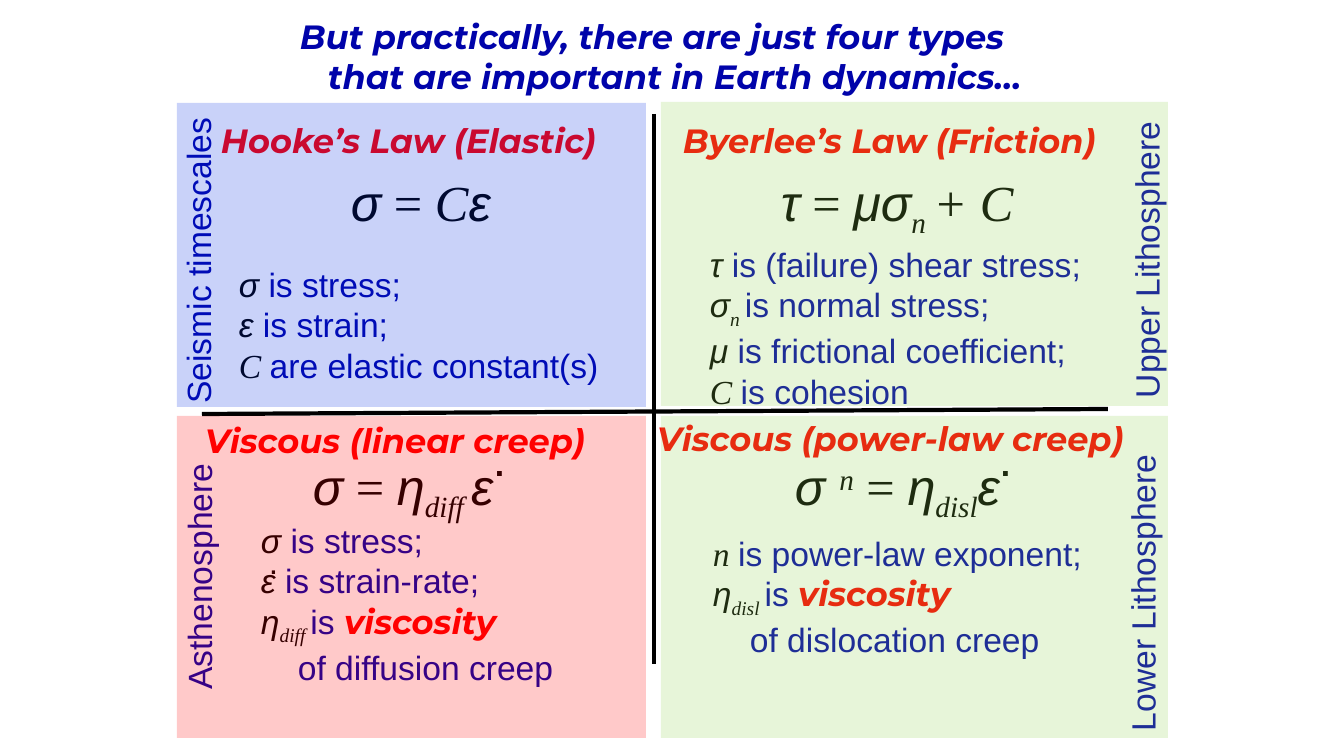
"""Build a slide of the four rheological laws that matter in Earth dynamics."""
from lxml import etree
from pptx import Presentation
from pptx.dml.color import RGBColor
from pptx.enum.shapes import MSO_CONNECTOR, MSO_SHAPE
from pptx.enum.text import MSO_AUTO_SIZE
from pptx.oxml.ns import qn
from pptx.util import Pt

PX = 914400 / 100.8
RECTANGLE = MSO_SHAPE.RECTANGLE
STRAIGHT = MSO_CONNECTOR.STRAIGHT
FIT_SHAPE = MSO_AUTO_SIZE.SHAPE_TO_FIT_TEXT
COLORS = {"navy": "0003AA", "red": "FF0000", "black": "000000",
          "blue": "002EE7", "green": "92D050"}
STYLES = {
    "title": dict(font="Montserrat", color="navy", bold=True, italic=True),
    "heading": dict(font="Montserrat", color="red", bold=True, italic=True),
    "body": dict(color="navy"),
    "greek": dict(italic=True),
    "latin": dict(font="Times New Roman", italic=True),
    "sign": dict(font="Times New Roman"),
    "sub": dict(font="Times New Roman", italic=True, baseline=-25),
    "sup": dict(font="Times New Roman", italic=True, baseline=30),
    "dot": dict(),
    "bold dot": dict(bold=True),
}


def px(length):
    return round(length * PX)


def add_run(paragraph, text, size=24, font="Arial", color="black",
            bold=False, italic=False, baseline=0):
    run = paragraph.add_run()
    run.text = text
    run.font.size = Pt(size)
    run.font.name = font
    run.font.bold = bold
    run.font.italic = italic
    run.font.color.rgb = RGBColor.from_string(COLORS[color])
    if baseline:
        run.font._element.set("baseline", str(baseline * 1000))


presentation = Presentation()
presentation.slide_width = px(1344)
presentation.slide_height = px(756)
slide = presentation.slides.add_slide(presentation.slide_layouts[6])

axes = [(654, 114, 654, 664), (202, 414, 1108, 409)]
for ends in axes:
    axis = slide.shapes.add_connector(STRAIGHT, *map(px, ends))
    axis.line.width = Pt(3)
    axis.line.color.rgb = RGBColor.from_string(COLORS["black"])
    etree.SubElement(axis._element.spPr, qn("a:effectLst"))

headings = [
    ("Hooke’s Law (Elastic)", 211, 115, 421),
    ("Byerlee’s Law (Friction)", 673, 115, 460),
    ("Viscous (linear creep)", 195, 415, 428),
    ("Viscous (power-law creep)", 647, 413, 514),
]
equations = [
    (341, 166, 161, [("σ", "greek"), (" = ", "sign"), ("C", "latin"), ("ε", "greek")]),
    (771, 166, 263, [("τ", "greek"), (" = ", "sign"), ("μσ", "greek"),
                     ("n ", "sub"), ("+ C", "latin")]),
    (303, 450, 212, [("σ", "greek"), (" = ", "sign"), ("η", "greek"),
                     ("diff ", "sub"), ("ε", "greek")]),
    (785, 450, 237, [("σ ", "greek"), ("n", "sup"), (" = ", "sign"),
                     ("η", "greek"), ("disl", "sub"), ("ε", "greek")]),
]
definitions = [
    (229, 259, 386, 132, [
        [("σ ", "greek"), ("is stress;", "body")],
        [("ε ", "greek"), ("is strain;", "body")],
        [("C ", "latin"), ("are elastic constant(s)", "body")]]),
    (700, 239, 406, 173, [
        [("τ ", "greek"), ("is (failure) shear stress;", "body")],
        [("σ", "greek"), ("n ", "sub"), ("is normal stress;", "body")],
        [("μ ", "greek"), ("is frictional coefficient;", "body")],
        [("C ", "latin"), ("is cohesion", "body")]]),
    (251, 515, 316, 173, [
        [("σ ", "greek"), ("is stress;", "body")],
        [("ε ", "greek"), ("is strain-rate;", "body")],
        [("η", "greek"), ("diff ", "sub"), ("is ", "body"), ("viscosity", "heading")],
        [("of diffusion creep", "body")]]),
    (703, 528, 403, 132, [
        [("n ", "latin"), ("is power-law exponent;", "body")],
        [("η", "greek"), ("disl ", "sub"), ("is ", "body"), ("viscosity", "heading")],
        [("of dislocation creep", "body")]]),
]
rate_dots = [(485, 438, "bold dot"), (259, 536, "dot"), (991, 438, "bold dot")]
depth_labels = [
    ("Seismic timescales", 43, 234, 309),
    ("Upper Lithosphere", 996, 233, 300),
    ("Lower Lithosphere", 992, 566, 300),
    ("Asthenosphere", 74, 550, 249),
]
hanging_lines = {"that are important in Earth dynamics…": 28,
                 "of diffusion creep": 37, "of dislocation creep": 37}

text_boxes = [(290, 11, 775, 92, 24, 0, [
    [("But practically, there are just four types", "title")],
    [("that are important in Earth dynamics…", "title")]])]
for text, left, top, width in headings:
    text_boxes.append((left, top, width, 50, 24, 0, [[(text, "heading")]]))
for left, top, width, runs in equations:
    text_boxes.append((left, top, width, 72, 36, 0, [runs]))
for left, top, width, height, lines in definitions:
    text_boxes.append((left, top, width, height, 24, 0, lines))
for left, top, style in rate_dots:
    text_boxes.append((left, top, 29, 50, 24, 0, [[(".", style)]]))
for text, left, top, width in depth_labels:
    text_boxes.append((left, top, width, 50, 24, 270, [[(text, "body")]]))

for left, top, width, height, size, rotation, lines in text_boxes:
    text_box = slide.shapes.add_textbox(px(left), px(top), px(width), px(height))
    text_box.rotation = rotation
    frame = text_box.text_frame
    frame.word_wrap = False
    frame.auto_size = FIT_SHAPE
    for index, runs in enumerate(lines):
        paragraph = frame.add_paragraph() if index else frame.paragraphs[0]
        indent = hanging_lines.get(runs[0][0], 0)
        if indent:
            paragraph._p.get_or_add_pPr().set("marL", str(px(indent)))
        for text, style in runs:
            add_run(paragraph, text, size=size, **STYLES[style])

quadrants = [
    (177, 103, 469, 304, "blue"),
    (661, 416, 507, 322, "green"),
    (661, 102, 507, 304, "green"),
    (177, 416, 469, 322, "red"),
]
for left, top, width, height, color in quadrants:
    quadrant = slide.shapes.add_shape(RECTANGLE, px(left), px(top), px(width), px(height))
    quadrant.shadow.inherit = False
    quadrant.line.fill.background()
    quadrant.fill.solid()
    quadrant.fill.fore_color.rgb = RGBColor.from_string(COLORS[color])
    tint = quadrant._element.spPr.find(qn("a:solidFill"))[0]
    etree.SubElement(tint, qn("a:alpha")).set("val", "21000")

presentation.save("out.pptx")
